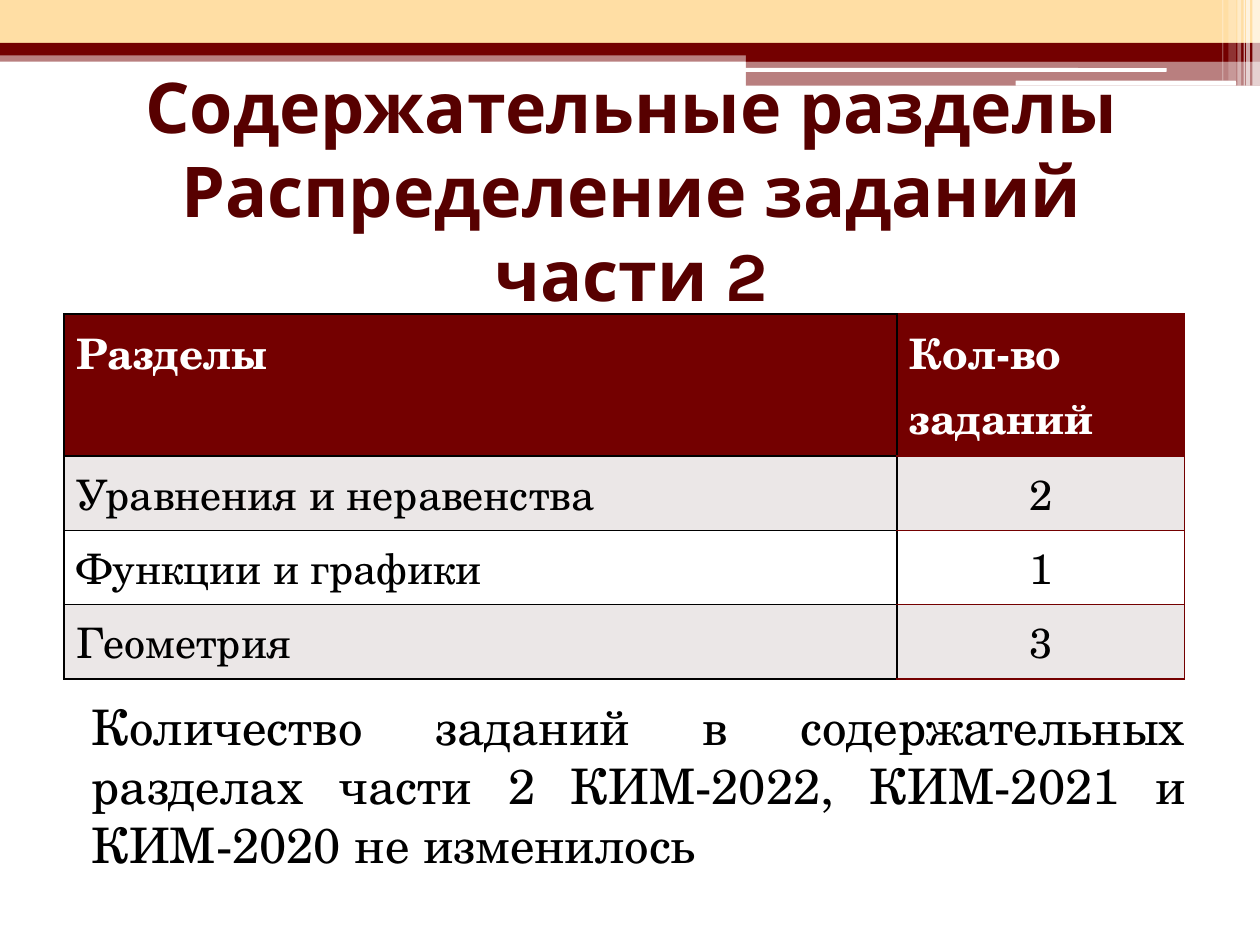
from lxml.etree import SubElement
from pptx import Presentation
from pptx.dml.color import RGBColor
from pptx.enum.shapes import MSO_SHAPE
from pptx.enum.text import MSO_ANCHOR, PP_ALIGN
from pptx.oxml.ns import qn
from pptx.util import Inches, Pt

WHITE = RGBColor(0xFF, 0xFF, 0xFF)
BLACK = RGBColor(0, 0, 0)
MAROON = RGBColor(0x74, 0, 0)
DARK_MAROON = RGBColor(0x57, 0, 0)
SAND = RGBColor(0xFF, 0xDE, 0xA4)
GREY = RGBColor(0xEB, 0xE7, 0xE7)
TITLE_FONT, BODY_FONT = "Karla", "TeX Gyre Schola"

WIDTH, HEIGHT = 10, 7.5
LEFT, TEXT_WIDTH = 0.51, 9

TITLE = ["Содержательные разделы", "Распределение заданий части 2"]
HEADER = [["Разделы"], ["Кол-во", "заданий"]]
SECTIONS = [("Уравнения и неравенства", 2), ("Функции и графики", 1), ("Геометрия", 3)]
NOTE = ("Количество заданий в содержательных разделах части 2 "
        "КИМ-2022, КИМ-2021 и КИМ-2020 не изменилось")

# Header bands: left, top, width, height, colour, opacity in percent
BANDS = [
    (0, 0.4, WIDTH, 0.09, MAROON, 50),
    (0, 0, WIDTH, 0.34, SAND, 100),
    (0, 0.34, WIDTH, 0.1, MAROON, 100),
    (5.92, 0.39, 4.08, 0.1, MAROON, 100),
    (5.92, 0.48, 4.08, 0.2, MAROON, 50),
]
ROUNDED_LINES = [(5.91, 0.54, 3.35, 0.03), (8.06, 0.64, 1.75, 0.04)]
# Vertical stripes in the corner: left, width, height, opacity
STRIPES = [
    (9.94, 0.06, 0.68, 65), (9.89, 0.03, 0.68, 65), (9.87, 0.01, 0.68, 60),
    (9.82, 0.03, 0.68, 40), (9.75, 0.06, 0.64, 20), (9.7, 0.01, 0.64, 30),
]
COLUMNS = [6.61, 2.28]
ROWS = [1.13] + [0.59] * len(SECTIONS)


def add_band(page, left, top, width, height, color, opacity=100,
             kind=MSO_SHAPE.RECTANGLE):
    band = page.shapes.add_shape(
        kind, Inches(left), Inches(top), Inches(width), Inches(height))
    band.shadow.inherit = False
    band.line.fill.background()
    band.fill.solid()
    band.fill.fore_color.rgb = color
    if opacity < 100:
        tint = band.fill._xPr.find(qn("a:solidFill"))[0]
        SubElement(tint, qn("a:alpha"), val=str(opacity * 1000))


def add_text_box(page, top, height):
    box = page.shapes.add_textbox(
        Inches(LEFT), Inches(top), Inches(TEXT_WIDTH), Inches(height))
    box.text_frame.word_wrap = True
    return box.text_frame


def style_runs(para, font, size, color, bold=False):
    for span in para.runs:
        span.font.name = font
        span.font.size = Pt(size)
        span.font.color.rgb = color
        span.font.bold = bold


def set_borders(cell, colors):
    properties = cell._tc.get_or_add_tcPr()
    for side, color in zip("LRTB", colors):
        line = SubElement(properties, qn(f"a:ln{side}"), w=str(Pt(1)))
        fill = SubElement(line, qn("a:solidFill"))
        SubElement(fill, qn("a:srgbClr"), val=str(color))


def fill_cell(cell, lines, column, is_header, fill):
    edge = MAROON if column else BLACK
    set_borders(cell, [BLACK, edge, edge, edge])
    cell.fill.solid()
    cell.fill.fore_color.rgb = fill
    cell.vertical_anchor = MSO_ANCHOR.TOP if is_header else MSO_ANCHOR.MIDDLE
    cell.text_frame.text = "\n".join(lines)
    for para in cell.text_frame.paragraphs:
        if column and not is_header:
            para.alignment = PP_ALIGN.CENTER
        style_runs(para, BODY_FONT, 24, WHITE if is_header else BLACK, is_header)


def add_sections_table(page):
    table = page.shapes.add_table(
        len(ROWS), len(COLUMNS), Inches(LEFT), Inches(2.49),
        Inches(sum(COLUMNS)), Inches(sum(ROWS))).table
    table.horz_banding = False
    for column, width in zip(table.columns, COLUMNS):
        column.width = Inches(width)
    for row, height in zip(table.rows, ROWS):
        row.height = Inches(height)
    content = [HEADER] + [[[name], [str(count)]] for name, count in SECTIONS]
    for row, cells in enumerate(content):
        fill = MAROON if row == 0 else (GREY if row % 2 else WHITE)
        for column, lines in enumerate(cells):
            fill_cell(table.cell(row, column), lines, column, row == 0, fill)


def main():
    deck = Presentation()
    deck.slide_width, deck.slide_height = Inches(WIDTH), Inches(HEIGHT)
    page = deck.slides.add_slide(deck.slide_layouts[6])

    # Header decoration
    for band in BANDS:
        add_band(page, *band)
    for line in ROUNDED_LINES:
        add_band(page, *line, WHITE, kind=MSO_SHAPE.ROUNDED_RECTANGLE)
    for left, width, height, opacity in STRIPES:
        add_band(page, left, 0, width, height, WHITE, opacity)

    # Title
    frame = add_text_box(page, 0.92, 1.17)
    frame.vertical_anchor = MSO_ANCHOR.MIDDLE
    para = frame.paragraphs[0]
    para.alignment = PP_ALIGN.CENTER
    for index, line in enumerate(TITLE):
        if index:
            para.add_line_break()
        para.add_run().text = line
    style_runs(para, TITLE_FONT, 40, DARK_MAROON, True)

    add_sections_table(page)

    # Closing note
    frame = add_text_box(page, 5.48, 1.37)
    para = frame.paragraphs[0]
    para.text = NOTE
    para.alignment = PP_ALIGN.JUSTIFY
    para.space_before = Pt(3)
    para._p.get_or_add_pPr().set("marL", str(Inches(0.12)))
    style_runs(para, BODY_FONT, 28, BLACK)

    deck.save("out.pptx")


if __name__ == "__main__":
    main()
